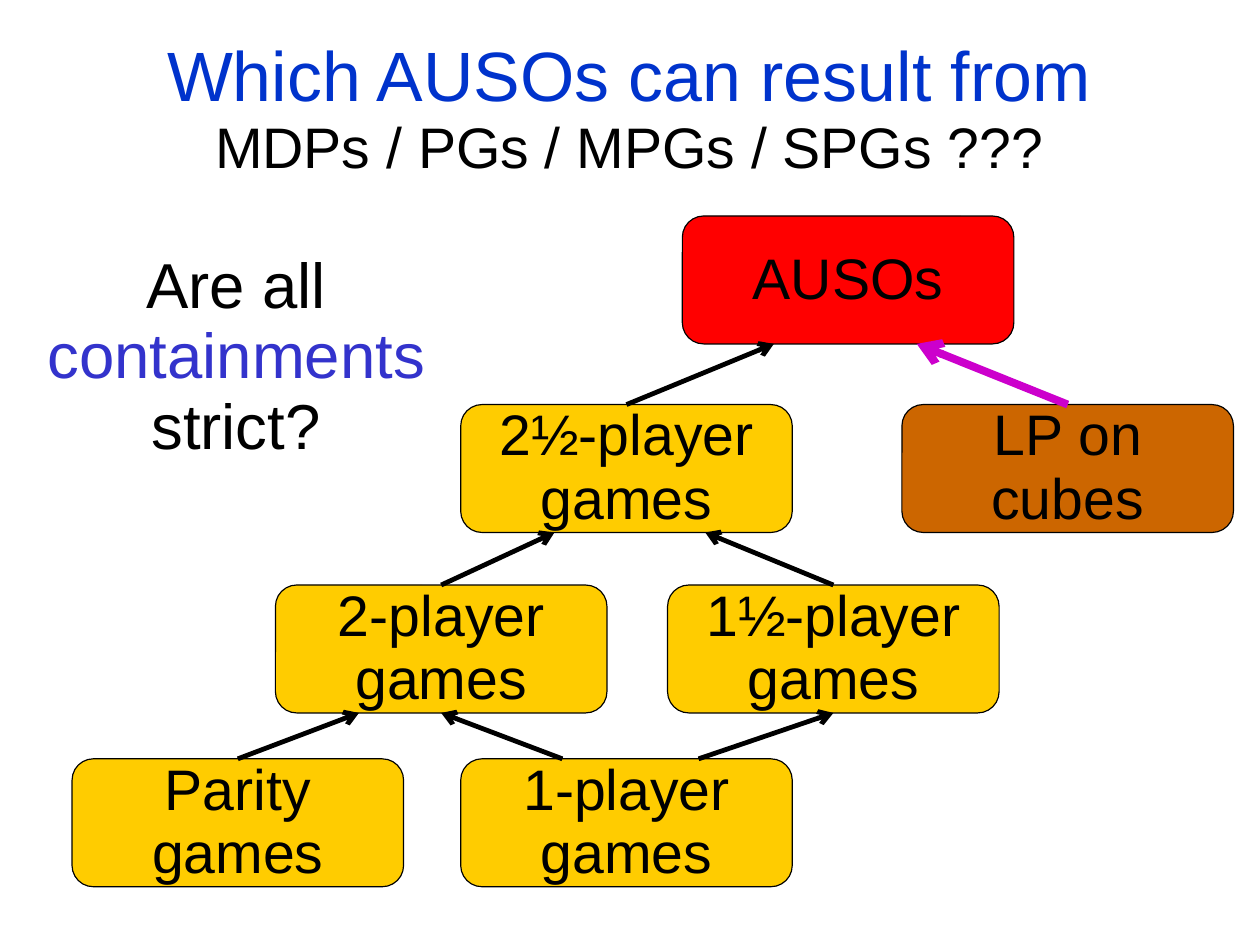
from lxml.etree import SubElement
from pptx import Presentation
from pptx.dml.color import RGBColor
from pptx.enum.shapes import MSO_CONNECTOR as Line, MSO_SHAPE as Shape
from pptx.enum.text import MSO_ANCHOR as Anchor, MSO_AUTO_SIZE as Fit, PP_ALIGN as Align
from pptx.oxml.ns import qn
from pptx.util import Pt


def paint(color, code):
    color.rgb = RGBColor.from_string(code)


def write(para, parts):
    """Fill a centred paragraph with (text, size, colour) runs; None breaks the line."""
    para.alignment, para.line_spacing = Align.CENTER, 0.93
    for part in parts:
        if part is None:
            para.add_line_break()
            continue
        run = para.add_run()
        run.text, size, code = part
        run.font.name, run.font.size = "Arial", Pt(size)
        paint(run.font.color, code)


deck = Presentation()
deck.slide_width, deck.slide_height = Pt(793.6), Pt(595.4)
slide = deck.slides.add_slide(deck.slide_layouts[5])
shapes = slide.shapes

# Title
title = shapes.title
for key, size in {"left": 0, "top": 17.3, "width": 793, "height": 104.4}.items():
    setattr(title, key, Pt(size))
frame = title.text_frame
style = {
    "margin_left": 0, "margin_top": 0, "margin_right": 0, "margin_bottom": 0,
    "vertical_anchor": Anchor.MIDDLE, "word_wrap": True, "auto_size": Fit.NONE,
}
for key, value in style.items():
    setattr(frame, key, value)
write(frame.paragraphs[0], [
    ("Which AUSOs can result from", 44, "0033CC"),
    None,
    ("MDPs / PGs / MPGs / SPGs ???", 36, "000000"),
])

# Question
ask = shapes.add_textbox(Pt(21.6), Pt(154.8), Pt(254.2), Pt(142.6))
ask.text_frame.word_wrap = True
write(ask.text_frame.paragraphs[0], [
    ("Are all ", 40, "000000"),
    ("containments ", 40, "3333CC"),
    ("strict?", 40, "000000"),
])

# Classes of games: name, lines of text, left, top, fill
WIDE, HIGH = 208.8, 80.6
ROWS = [136.1, 254.9, 368.6, 478.1]
GOLD = "FFCC00"
games = [
    ("auso", ["AUSOs"], 429.8, 0, "FF0000"),
    ("two half", ["2½-player games"], 290.2, 1, GOLD),
    ("cubes", ["LP on cubes"], 568.1, 1, "CC6600"),
    ("two", ["2-player games"], 173.5, 2, GOLD),
    ("one half", ["1½-player games"], 420.5, 2, GOLD),
    ("parity", ["Parity", "games"], 45.4, 3, GOLD),
    ("one", ["1-player games"], 290.2, 3, GOLD),
]
boxes = {}
for name, lines, left, row, fill in games:
    box = shapes.add_shape(Shape.ROUNDED_RECTANGLE, Pt(left), Pt(ROWS[row]), Pt(WIDE), Pt(HIGH))
    box.shadow.inherit = False
    box.fill.solid()
    paint(box.fill.fore_color, fill)
    paint(box.line.color, "000000")
    box.line.width = Pt(0.75)
    frame = box.text_frame
    frame.word_wrap, frame.vertical_anchor = True, Anchor.MIDDLE
    parts = []
    for line in lines:
        parts += [None] * bool(parts) + [(line, 36, "000000")]
    write(frame.paragraphs[0], parts)
    boxes[name] = box

# Containments: from a box top to a box bottom, offset from each left edge
MID = WIDE / 2
arrows = [
    ("two half", MID, "auso", 57.6, "000000", 3),
    ("cubes", MID, "auso", 147.6, "CC00CC", 5),
    ("two", MID, "two half", 59, "000000", 3),
    ("one half", MID, "two half", 154, "000000", 3),
    ("parity", MID, "two", 52.6, "000000", 3),
    ("one", 64, "two", MID, "000000", 3),
    ("one", 149.8, "one half", MID, "000000", 3),
]
for low, start, high, end, code, width in arrows:
    part, whole = boxes[low], boxes[high]
    arrow = shapes.add_connector(
        Line.STRAIGHT, part.left + Pt(start), part.top,
        whole.left + Pt(end), whole.top + whole.height)
    if start == MID:
        arrow.begin_connect(part, 0)
    if end == MID:
        arrow.end_connect(whole, 2)
    paint(arrow.line.color, code)
    arrow.line.width = Pt(width)
    props = arrow.element.spPr
    SubElement(props.find(qn("a:ln")), qn("a:tailEnd"), type="arrow")
    SubElement(props, qn("a:effectLst"))

deck.save("out.pptx")
